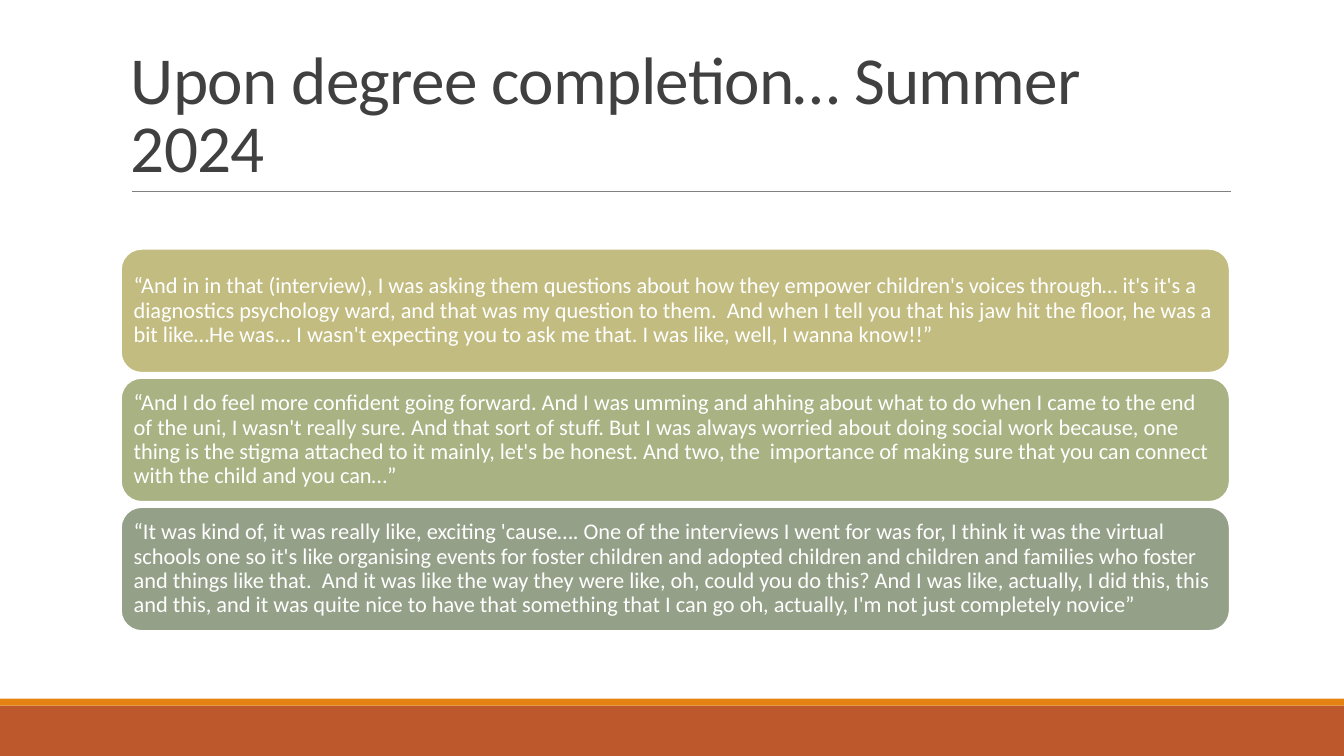
from dataclasses import dataclass

import pptx
import pptx.dml.color
import pptx.enum.shapes
import pptx.enum.text
import pptx.oxml
import pptx.oxml.ns
import pptx.shapes.autoshape
import pptx.slide
import pptx.text.text
import pptx.util

Pt = pptx.util.Pt
MSO_SHAPE = pptx.enum.shapes.MSO_SHAPE
MSO_ANCHOR = pptx.enum.text.MSO_ANCHOR

SLIDE_WIDTH, SLIDE_HEIGHT = 960, 540
CONTENT_LEFT, CONTENT_WIDTH = 86.4, 792
CARD_TOP, CARD_HEIGHT, CARD_PITCH = 177.8, 88.5, 92.2


@dataclass
class Band:
    top: float
    height: float
    fill: str


@dataclass
class Quote:
    fill: str
    text: str


BANDS = [Band(504, 36, "BD582C"), Band(499, 5, "E48312")]

QUOTES = [
    Quote(
        "C2BC80",
        "“And in in that (interview), I was asking them questions about how they "
        "empower children's voices through… it's it's a diagnostics psychology ward, "
        "and that was my question to them.  And when I tell you that his jaw hit the "
        "floor, he was a bit like…He was... I wasn't expecting you to ask me that. "
        "I was like, well, I wanna know!!”",
    ),
    Quote(
        "A8B283",
        "“And I do feel more confident going forward. And I was umming and ahhing "
        "about what to do when I came to the end of the uni, I wasn't really sure. "
        "And that sort of stuff. But I was always worried about doing social work "
        "because, one thing is the stigma attached to it mainly, let's be honest. "
        "And two, the  importance of making sure that you can connect with the child "
        "and you can…”",
    ),
    Quote(
        "94A088",
        "“It was kind of, it was really like, exciting 'cause…. One of the interviews "
        "I went for was for, I think it was the virtual schools one so it's like "
        "organising events for foster children and adopted children and children and "
        "families who foster and things like that.  And it was like the way they were "
        "like, oh, could you do this? And I was like, actually, I did this, this and "
        "this, and it was quite nice to have that something that I can go oh, "
        "actually, I'm not just completely novice”",
    ),
]


def color(value: str) -> pptx.dml.color.RGBColor:
    return pptx.dml.color.RGBColor.from_string(value)


def add_filled_shape(
    slide: pptx.slide.Slide, kind: MSO_SHAPE,
    left: float, top: float, width: float, height: float, fill: str,
) -> pptx.shapes.autoshape.Shape:
    shape = slide.shapes.add_shape(kind, Pt(left), Pt(top), Pt(width), Pt(height))
    shape.shadow.inherit = False
    shape.fill.solid()
    shape.fill.fore_color.rgb = color(fill)
    shape.line.fill.background()
    return shape


def write_text(
    text_frame: pptx.text.text.TextFrame, text: str, size: float,
    text_color: str, line_spacing: float, anchor: MSO_ANCHOR,
) -> pptx.text.text._Run:
    """Fill the frame with one left-aligned paragraph and return its run."""
    text_frame.word_wrap = True
    text_frame.vertical_anchor = anchor
    text_frame.text = text
    paragraph = text_frame.paragraphs[0]
    paragraph.alignment = pptx.enum.text.PP_ALIGN.LEFT
    paragraph.line_spacing = line_spacing
    run = paragraph.runs[0]
    run.font.name = "Calibri"
    run.font.size = Pt(size)
    run.font.color.rgb = color(text_color)
    return run


def add_title(slide: pptx.slide.Slide, text: str) -> None:
    title = slide.shapes.add_textbox(
        Pt(CONTENT_LEFT), Pt(22.3), Pt(CONTENT_WIDTH), Pt(114.5)
    )
    run = write_text(title.text_frame, text, 48, "404040", 0.85, MSO_ANCHOR.BOTTOM)
    run.font._element.set("spc", "-50")


def add_title_rule(slide: pptx.slide.Slide) -> None:
    rule = slide.shapes.add_connector(
        pptx.enum.shapes.MSO_CONNECTOR.STRAIGHT, Pt(94.3), Pt(136.8), Pt(879), Pt(136.8)
    )
    rule.line.color.rgb = color("808080")
    rule.line.width = Pt(0.5)
    properties = rule._element.spPr
    properties.append(pptx.oxml.parse_xml(
        f'<a:effectLst {pptx.oxml.ns.nsdecls("a")}/>'
    ))


def add_quote(slide: pptx.slide.Slide, quote: Quote, top: float) -> None:
    card = add_filled_shape(
        slide, MSO_SHAPE.ROUNDED_RECTANGLE,
        CONTENT_LEFT, top, CONTENT_WIDTH, CARD_HEIGHT, quote.fill,
    )
    card.line.color.rgb = color("FFFFFF")
    card.line.width = Pt(1.25)
    frame = card.text_frame
    frame.margin_left = frame.margin_right = Pt(4.8)
    frame.margin_top = frame.margin_bottom = Pt(4.8)
    write_text(frame, quote.text, 16, "FFFFFF", 0.9, MSO_ANCHOR.MIDDLE)


def main() -> None:
    presentation = pptx.Presentation()
    presentation.slide_width = Pt(SLIDE_WIDTH)
    presentation.slide_height = Pt(SLIDE_HEIGHT)
    slide = presentation.slides.add_slide(presentation.slide_layouts[6])

    for band in BANDS:
        add_filled_shape(
            slide, MSO_SHAPE.RECTANGLE, 0, band.top, SLIDE_WIDTH, band.height, band.fill
        )
    add_title_rule(slide)
    add_title(slide, "Upon degree completion… Summer 2024")
    for index, quote in enumerate(QUOTES):
        add_quote(slide, quote, CARD_TOP + index * CARD_PITCH)

    presentation.save("out.pptx")


if __name__ == "__main__":
    main()
